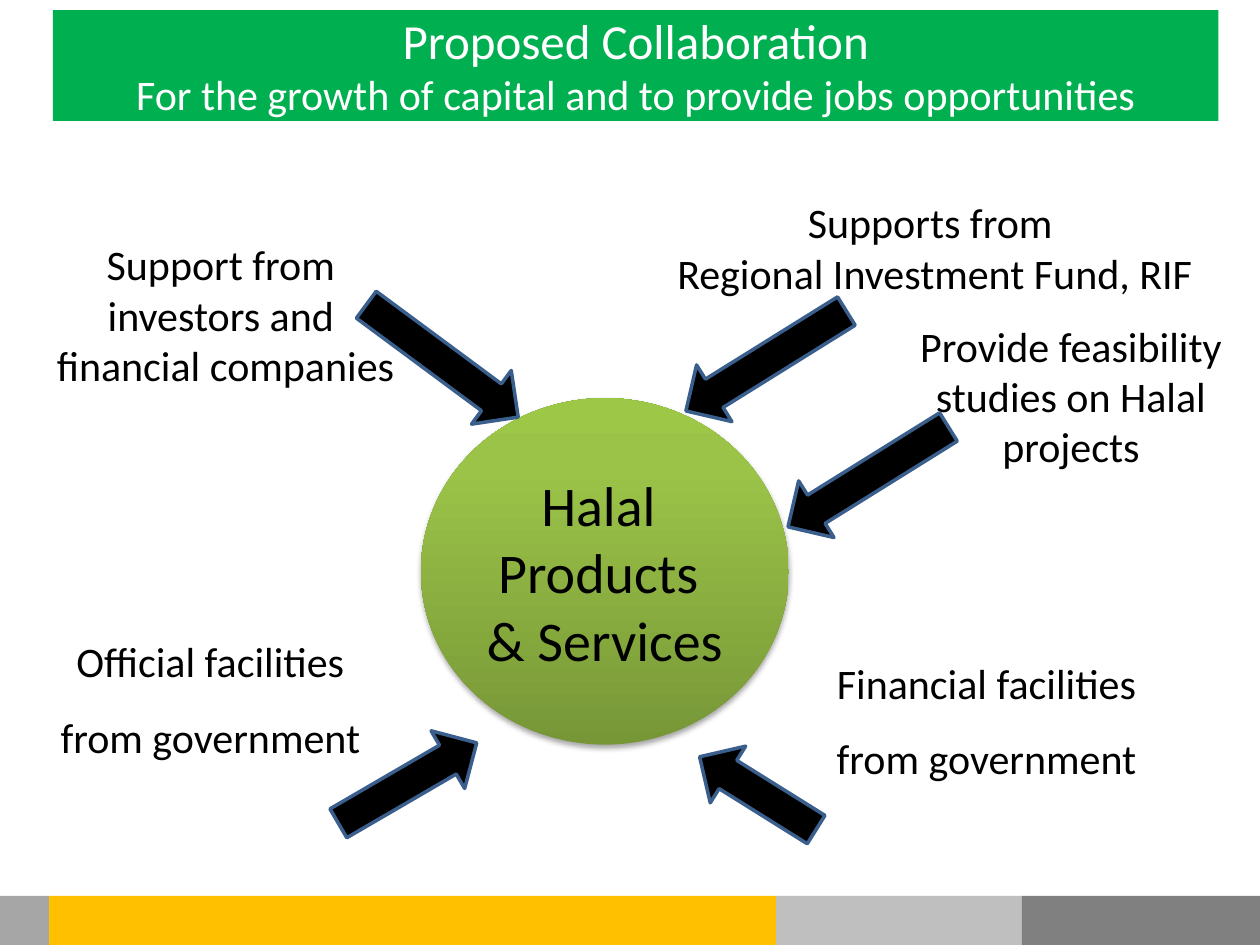
import copy
import itertools

import lxml.etree
import pptx
import pptx.dml.color
import pptx.enum.shapes
import pptx.enum.text
import pptx.oxml.ns
import pptx.util

THEME = {
    "font": "Calibri",
    "title size": 28, "label size": 24, "hub size": 32,
    "text": "000000", "title text": "FFFFFF", "title fill": "00B050",
    "arrow fill": "000000", "arrow line": "3A5F8C",
    "hub stops": [(0, "779737"), (0.8, "9BC348"), (1, "9DC746")],
    "footer": ["A6A6A6", "FFC000", "BFBFBF", "808080"],
}
COLUMNS, ROWS = 100, 75
SHAPES = pptx.enum.shapes.MSO_SHAPE
rgb = pptx.dml.color.RGBColor.from_string

presentation = pptx.Presentation()
presentation.slide_width = pptx.util.Inches(10)
presentation.slide_height = pptx.util.Inches(7.5)
column = presentation.slide_width / COLUMNS
row = presentation.slide_height / ROWS
slide = presentation.slides.add_slide(presentation.slide_layouts[5])


def cells(left, top, width, height):
    return [round(left * column), round(top * row), round(width * column), round(height * row)]


def write(shape, lines, sizes, color, anchor, wrap=False, spacing=1):
    frame = shape.text_frame
    frame.text = "\n".join(lines)
    frame.word_wrap = wrap
    frame.auto_size = pptx.enum.text.MSO_AUTO_SIZE.NONE
    frame.vertical_anchor = anchor
    for paragraph, size in zip(frame.paragraphs, sizes):
        paragraph.alignment = pptx.enum.text.PP_ALIGN.CENTER
        paragraph.line_spacing = spacing
        paragraph.font.name = THEME["font"]
        paragraph.font.size = pptx.util.Pt(size)
        paragraph.font.color.rgb = rgb(color)


title = slide.shapes.title
title.left, title.top, title.width, title.height = cells(4.2, 0.8, 92.5, 8.8)
title.fill.solid()
title.fill.fore_color.rgb = rgb(THEME["title fill"])
write(title,
      ["Proposed Collaboration", "For the growth of capital and to provide jobs opportunities"],
      [THEME["title size"], THEME["label size"]], THEME["title text"],
      pptx.enum.text.MSO_ANCHOR.TOP, wrap=True)
frame = title.text_frame
frame.margin_left = frame.margin_top = frame.margin_right = frame.margin_bottom = 0

hub = slide.shapes.add_shape(SHAPES.OVAL, *cells(33.4, 31.6, 29.2, 27.5))
hub.line.fill.background()
hub.fill.gradient()
hub.fill.gradient_angle = 90
stop_list = hub.fill._fill._gradFill.gsLst
stop_list.insert(1, copy.deepcopy(stop_list[0]))
for stop, (position, color) in zip(hub.fill.gradient_stops, THEME["hub stops"]):
    stop.position = position
    stop.color.rgb = rgb(color)
    stop.color.brightness = 0
hub.shadow.inherit = False
qn = pptx.oxml.ns.qn
effects = hub._element.spPr.find(qn("a:effectLst"))
shadow = lxml.etree.SubElement(effects, qn("a:outerShdw"), blurRad="40000", dist="23000",
                               dir="5400000", rotWithShape="0")
shadow_color = lxml.etree.SubElement(shadow, qn("a:srgbClr"), val="000000")
lxml.etree.SubElement(shadow_color, qn("a:alpha"), val="35000")
write(hub, ["Halal ", "Products ", "& Services"], itertools.repeat(THEME["hub size"]),
      THEME["text"], pptx.enum.text.MSO_ANCHOR.MIDDLE)

supports = [
    (["Supports from ", "Regional Investment Fund, RIF"], 1,
     (60, 16.7, 28.4, 5.8), (53.3, 26, 15, 5.3), 148.1),
    (["Financial facilities", "from government"], 1.5,
     (64.1, 51.7, 28.4, 8.9), (54.7, 60.3, 10.9, 5.3), 212),
    (["Official facilities", "from government"], 1.5,
     (2.5, 50, 28.4, 8.9), (26, 59.5, 12.7, 5.3), 329.8),
    (["Support from ", "investors and ", "financial companies"], 1,
     (5.8, 20.8, 24.2, 8.3), (27.6, 26, 15, 5.3), 36.5),
    (["Provide feasibility", " studies on Halal ", "projects"], 1,
     (70.8, 25.8, 28.4, 11.2), (61.4, 35.2, 15, 5.3), 148.1),
]
for lines, spacing, label_cells, arrow_cells, rotation in supports:
    label = slide.shapes.add_textbox(*cells(*label_cells))
    write(label, lines, itertools.repeat(THEME["label size"]), THEME["text"],
          pptx.enum.text.MSO_ANCHOR.MIDDLE, spacing=spacing)
    arrow = slide.shapes.add_shape(SHAPES.RIGHT_ARROW, *cells(*arrow_cells))
    arrow.rotation = rotation
    arrow.shadow.inherit = False
    arrow.fill.solid()
    arrow.fill.fore_color.rgb = rgb(THEME["arrow fill"])
    arrow.line.color.rgb = rgb(THEME["arrow line"])
    arrow.line.width = pptx.util.Pt(2)

footer_edges = [0, 3.9, 61.6, 81.1, COLUMNS]
footer_top = 71.1
for (left, right), color in zip(itertools.pairwise(footer_edges), THEME["footer"]):
    band = slide.shapes.add_shape(
        SHAPES.RECTANGLE, *cells(left, footer_top, right - left, ROWS - footer_top))
    band.shadow.inherit = False
    band.line.fill.background()
    band.fill.solid()
    band.fill.fore_color.rgb = rgb(color)

presentation.save("out.pptx")
